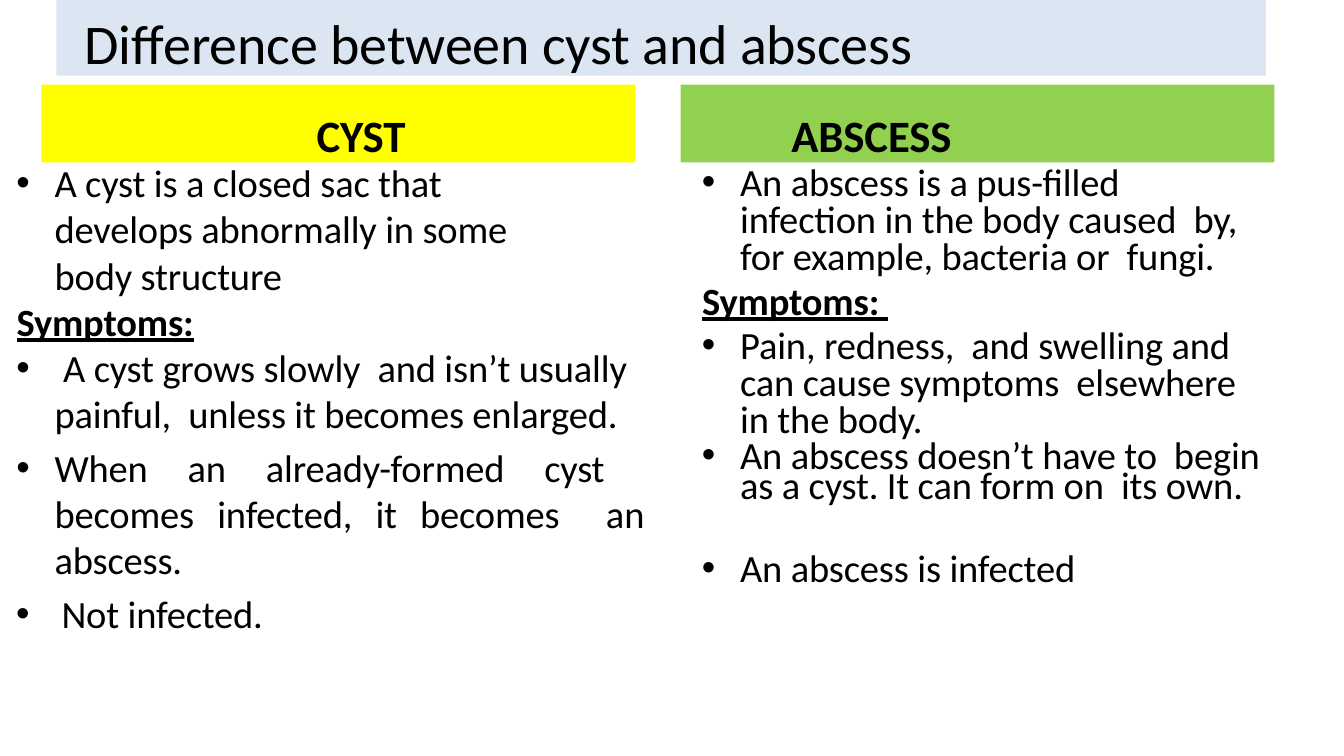
from dataclasses import dataclass, field
from typing import Any, Optional

from lxml.etree import SubElement
from pptx import Presentation
from pptx.dml.color import RGBColor
from pptx.enum.text import MSO_ANCHOR, MSO_AUTO_SIZE, PP_ALIGN
from pptx.oxml.ns import qn
from pptx.util import Inches, Pt

SLIDE_WIDTH = Inches(13.33)
SLIDE_HEIGHT = Inches(7.5)
COMPARISON_LAYOUT = 4


@dataclass(frozen=True)
class Theme:
    font: str = "Calibri"
    text: str = "000000"
    title_band: str = "DCE6F2"
    cyst: str = "FFFF00"
    abscess: str = "92D050"
    title_size: float = 40
    heading_size: float = 32
    body_size: float = 27.5
    tracking: int = -10  # hundredths of a point


THEME = Theme()


@dataclass(frozen=True)
class Area:
    """Position and size in percent of the slide's width and height."""
    left: float
    top: float
    width: float
    height: float


@dataclass(frozen=True)
class Line:
    """One paragraph; horizontal lengths are percent of the slide's width."""
    text: str
    margin: float = 2.93
    hanging: float = 2.85
    right: float = 0
    bullet: bool = True
    font: dict[str, Any] = field(default_factory=dict)
    layout: dict[str, Any] = field(default_factory=dict)


@dataclass(frozen=True)
class Block:
    """One placeholder with its text."""
    placeholder: int
    area: Area
    lines: list[Line]
    size: float
    inset: float  # percent of the slide's height
    fill: Optional[str] = None
    anchor: MSO_ANCHOR = MSO_ANCHOR.TOP
    auto_size: MSO_AUTO_SIZE = MSO_AUTO_SIZE.NONE


def across(percent: float) -> int:
    return round(SLIDE_WIDTH * percent / 100)


def down(percent: float) -> int:
    return round(SLIDE_HEIGHT * percent / 100)


def apply_format(target: Any, values: dict[str, Any]) -> None:
    for name, value in values.items():
        setattr(target, name, value)


def spacing(before: float, line: Any = 1.0, **more: Any) -> dict[str, Any]:
    return {"space_before": Pt(before), "line_spacing": line, **more}


def plain_line(text: str, margin: float, alignment: PP_ALIGN, bold: bool) -> Line:
    return Line(text, margin, 0, bullet=False, font={"bold": bold},
                layout=spacing(0, alignment=alignment))


def symptoms_line(text: str, layout: dict[str, Any]) -> Line:
    return Line(text, 0.1, 0, bullet=False, layout=layout,
                font={"bold": True, "underline": True})


def write_line(paragraph: Any, line: Line, size: float) -> None:
    apply_format(paragraph, {"alignment": PP_ALIGN.LEFT, **line.layout})
    properties = paragraph._p.get_or_add_pPr()
    lengths = {"marL": line.margin, "indent": -line.hanging, "marR": line.right}
    for name, percent in lengths.items():
        properties.set(name, str(across(percent)))
    if line.bullet:
        SubElement(properties, qn("a:buFont")).set("typeface", "Arial")
        SubElement(properties, qn("a:buChar")).set("char", "•")
    else:
        SubElement(properties, qn("a:buNone"))

    run = paragraph.add_run()
    run.text = line.text
    apply_format(run.font, {"name": THEME.font, "size": Pt(size), "bold": False,
                            **line.font})
    run.font.color.rgb = RGBColor.from_string(THEME.text)
    run._r.get_or_add_rPr().set("spc", str(THEME.tracking))


def fill_block(slide: Any, block: Block) -> None:
    shape = slide.placeholders[block.placeholder]
    area = block.area
    apply_format(shape, {"left": across(area.left), "top": down(area.top),
                         "width": across(area.width), "height": down(area.height)})
    if block.fill:
        shape.fill.solid()
        shape.fill.fore_color.rgb = RGBColor.from_string(block.fill)
    frame = shape.text_frame
    apply_format(frame, {"margin_left": 0, "margin_right": 0, "margin_bottom": 0,
                         "margin_top": down(block.inset), "word_wrap": True,
                         "vertical_anchor": block.anchor,
                         "auto_size": block.auto_size})
    for number, line in enumerate(block.lines):
        paragraph = frame.add_paragraph() if number else frame.paragraphs[0]
        write_line(paragraph, line, block.size)


def heading_block(placeholder: int, left: float, fill: str, line: Line) -> Block:
    return Block(placeholder, Area(left, 11.2, 44.19, 10.27), [line],
                 THEME.heading_size, 3.07, fill)


def body_block(placeholder: int, area: Area, inset: float, lines: list[Line]) -> Block:
    return Block(placeholder, area, lines, THEME.body_size, inset,
                 auto_size=MSO_AUTO_SIZE.SHAPE_TO_FIT_TEXT)


# Wording of the two columns
CYST_LINES = [
    Line("A cyst is a closed sac that develops abnormally in some body\u00a0structure",
         right=9, layout=spacing(0.9)),
    symptoms_line("Symptoms:", spacing(0.1)),
    Line(" A cyst grows slowly  and isn’t usually painful,  unless it becomes enlarged.",
         layout=spacing(0.1)),
    Line("When an already-formed cyst  becomes infected, it becomes  an abscess.",
         right=1.27, layout=spacing(5.2, alignment=PP_ALIGN.JUSTIFY)),
    Line("Not infected.", 3.45, 3.38,
         layout=spacing(5.3, alignment=PP_ALIGN.JUSTIFY)),
]
ABSCESS_LINES = [
    Line("An abscess is a pus-filled  infection in the body caused  by, "
         "for example, bacteria or  fungi.", right=1.5, layout=spacing(6.2, 0.8)),
    symptoms_line("Symptoms: ", spacing(5.3, 0.8)),
    Line("Pain, redness,  and swelling and can cause symptoms  elsewhere in the body.",
         layout=spacing(5.3, 0.8)),
    Line("An abscess doesn’t have to  begin as a cyst. It can form on  its own.",
         layout=spacing(5.2, Pt(21.1))),
    Line("An abscess is infected", layout=spacing(26.5)),
]

# Title band, column headings and column texts
BLOCKS = [
    Block(0, Area(4.2, -2.4, 90, 12.4),
          [plain_line("Difference between cyst and abscess", 2.1, PP_ALIGN.LEFT, False)],
          THEME.title_size, 3.47, THEME.title_band, MSO_ANCHOR.MIDDLE),
    heading_block(1, 3.08, THEME.cyst,
                  plain_line("CYST", 3.38, PP_ALIGN.CENTER, True)),
    heading_block(3, 50.64, THEME.abscess,
                  plain_line("ABSCESS", 8.25, PP_ALIGN.LEFT, True)),
    body_block(2, Area(1.13, 20.93, 48.09, 37.47), 0.13, CYST_LINES),
    body_block(4, Area(52.14, 20.93, 42.09, 57.47), 1.2, ABSCESS_LINES),
]


def main() -> None:
    presentation = Presentation()
    apply_format(presentation, {"slide_width": SLIDE_WIDTH,
                                "slide_height": SLIDE_HEIGHT})
    slide = presentation.slides.add_slide(presentation.slide_layouts[COMPARISON_LAYOUT])
    for block in BLOCKS:
        fill_block(slide, block)
    presentation.save("out.pptx")


if __name__ == "__main__":
    main()
